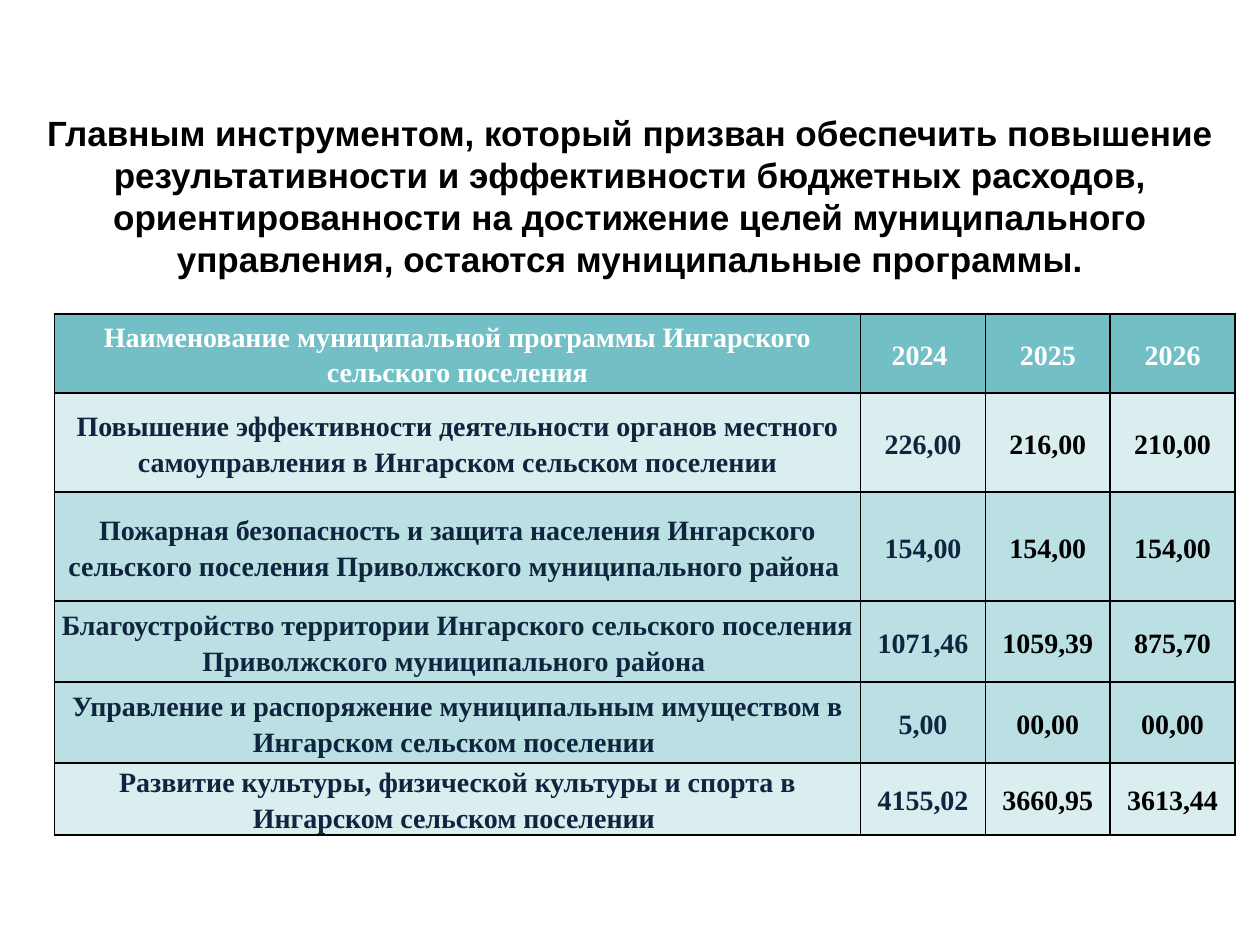
"""Build a slide listing the municipal programmes and their yearly funding."""
from dataclasses import dataclass

import lxml.etree
import pptx
import pptx.dml.color
import pptx.enum.text
import pptx.oxml.ns
import pptx.util

Pt = pptx.util.Pt
RGBColor = pptx.dml.color.RGBColor
ANCHOR = pptx.enum.text.MSO_ANCHOR
CENTER = pptx.enum.text.PP_ALIGN.CENTER
qn = pptx.oxml.ns.qn

BLACK = RGBColor(0x00, 0x00, 0x00)
WHITE = RGBColor(0xFF, 0xFF, 0xFF)
NAVY = RGBColor(0x0F, 0x24, 0x3E)
TEAL = RGBColor(0x72, 0xBF, 0xC5)
PALE = RGBColor(0xDA, 0xED, 0xEF)
LIGHT = RGBColor(0xBB, 0xE0, 0xE3)

TITLE = (
    "Главным инструментом, который призван обеспечить повышение "
    "результативности и эффективности бюджетных расходов, "
    "ориентированности на достижение целей муниципального "
    "управления, остаются муниципальные программы."
)
COLUMN_WIDTHS = (460.8, 71.3, 71.3, 71.3)
BODY_COLORS = (NAVY, NAVY, BLACK, BLACK)


@dataclass(frozen=True)
class Row:
    height: float
    fill: RGBColor
    texts: tuple[str, ...]
    colors: tuple[RGBColor, ...] = BODY_COLORS


ROWS = (
    Row(45.2, TEAL, ("Наименование муниципальной программы Ингарского сельского поселения",
                     "2024 ", "2025", "2026"), (WHITE,) * 4),
    Row(56.7, PALE, ("Повышение эффективности деятельности органов местного "
                     "самоуправления в Ингарском сельском поселении",
                     "226,00", "216,00", "210,00")),
    Row(62.4, LIGHT, ("Пожарная безопасность и защита населения Ингарского "
                      "сельского поселения Приволжского муниципального района ",
                      "154,00", "154,00", "154,00")),
    Row(46.3, LIGHT, ("Благоустройство территории Ингарского сельского поселения "
                      "Приволжского муниципального района ",
                      "1071,46", "1059,39", "875,70")),
    Row(46.3, LIGHT, ("Управление и распоряжение муниципальным имуществом в "
                      "Ингарском сельском поселении ",
                      "5,00", "00,00", "00,00")),
    Row(39.6, PALE, ("Развитие культуры, физической культуры и спорта в "
                     "Ингарском сельском поселении ",
                     "4155,02", "3660,95", "3613,44")),
)


def add_run(p, text: str, font: str, size: float, color: RGBColor) -> None:
    r = p.add_run()
    r.text = text
    r.font.name = font
    r.font.size = Pt(size)
    r.font.bold = True
    r.font.color.rgb = color


def add_borders(cell, color: RGBColor, width: float) -> None:
    tc_pr = cell._tc.get_or_add_tcPr()
    for side in ("a:lnL", "a:lnR", "a:lnT", "a:lnB"):
        ln = lxml.etree.SubElement(tc_pr, qn(side), w=str(int(Pt(width))))
        fill = lxml.etree.SubElement(ln, qn("a:solidFill"))
        lxml.etree.SubElement(fill, qn("a:srgbClr"), val=str(color))


def draw_title(s) -> None:
    sp = s.shapes.title
    sp.left, sp.top, sp.width, sp.height = Pt(0), Pt(30.2), Pt(720), Pt(133.2)
    tf = sp.text_frame
    tf.word_wrap = True
    tf.auto_size = pptx.enum.text.MSO_AUTO_SIZE.NONE
    tf.vertical_anchor = ANCHOR.BOTTOM
    p = tf.paragraphs[0]
    p.alignment = CENTER
    add_run(p, TITLE, "Arial", 20, BLACK)


def draw_cell(cell, text: str, color: RGBColor, fill: RGBColor) -> None:
    cell.margin_left = cell.margin_right = Pt(3.6)
    cell.margin_top = cell.margin_bottom = Pt(0)
    cell.vertical_anchor = ANCHOR.MIDDLE
    add_borders(cell, BLACK, 1)
    cell.fill.solid()
    cell.fill.fore_color.rgb = fill
    p = cell.text_frame.paragraphs[0]
    p.alignment = CENTER
    p.line_spacing = 1.15
    p.space_after = Pt(10)
    add_run(p, text, "Times New Roman", 16, color)


def draw_table(s, rows: tuple[Row, ...]) -> None:
    width = sum(COLUMN_WIDTHS)
    height = sum(row.height for row in rows)
    table = s.shapes.add_table(len(rows), len(COLUMN_WIDTHS),
                               Pt(31), Pt(179.3), Pt(width), Pt(height)).table
    table.horz_banding = False
    table.first_row = False
    for column, column_width in zip(table.columns, COLUMN_WIDTHS):
        column.width = Pt(column_width)
    for i, row in enumerate(rows):
        table.rows[i].height = Pt(row.height)
        for j, (text, color) in enumerate(zip(row.texts, row.colors)):
            draw_cell(table.cell(i, j), text, color, row.fill)


def main() -> None:
    prs = pptx.Presentation()
    prs.slide_width, prs.slide_height = Pt(720), Pt(540)
    s = prs.slides.add_slide(prs.slide_layouts[5])
    draw_title(s)
    draw_table(s, ROWS)
    prs.save("out.pptx")


if __name__ == "__main__":
    main()
